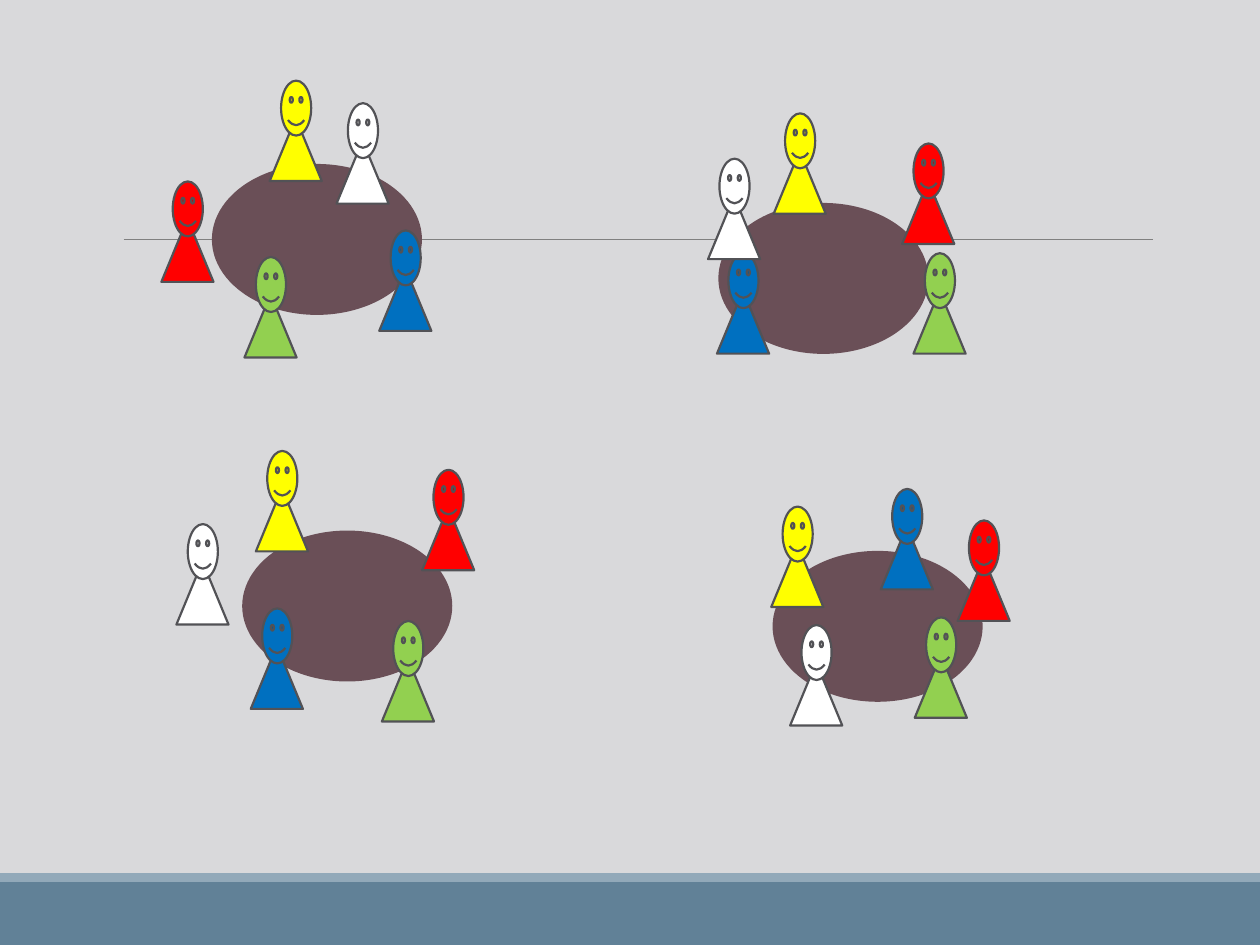
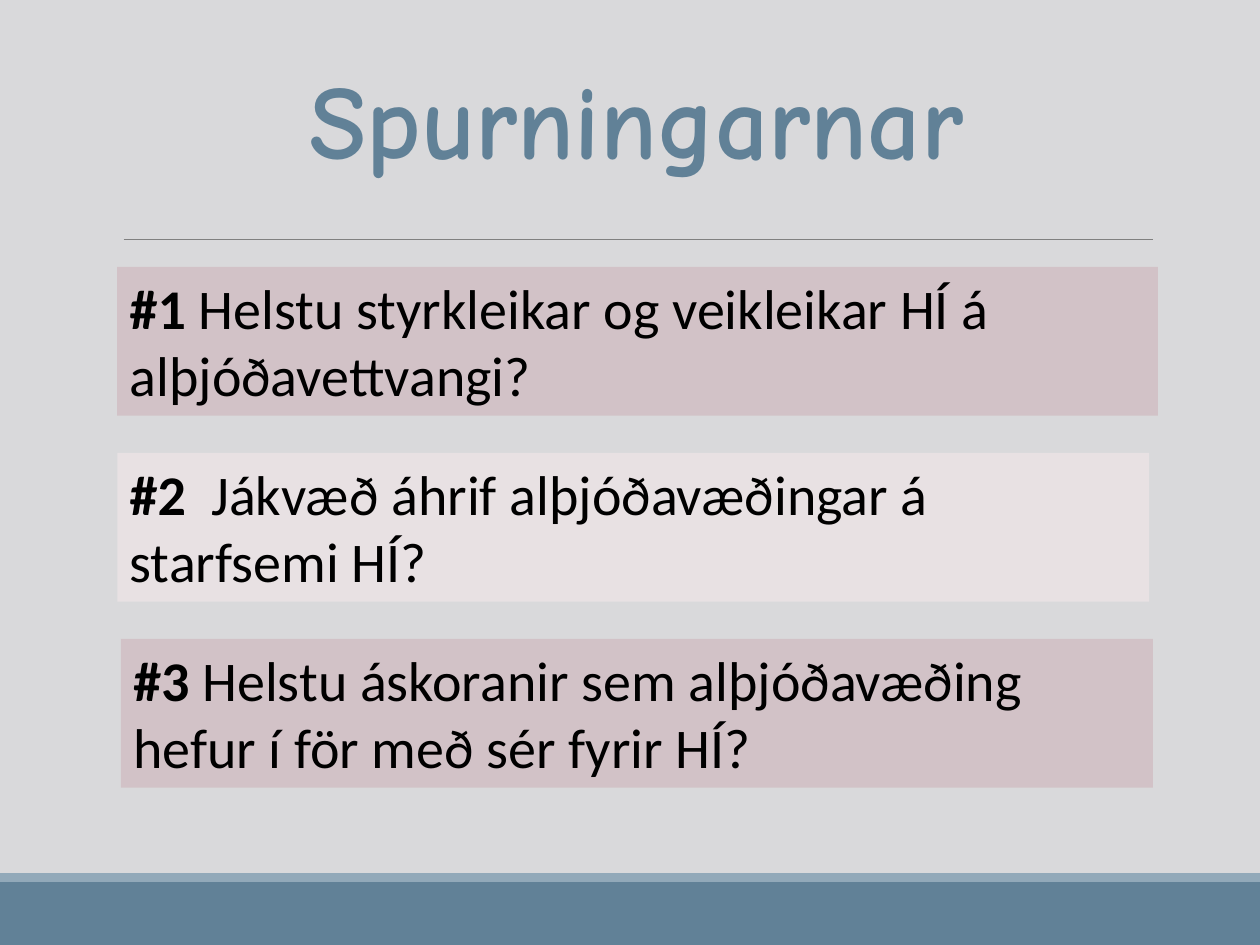
from lxml.etree import SubElement
from pptx import Presentation
from pptx.dml.color import RGBColor
from pptx.enum.shapes import MSO_CONNECTOR, MSO_SHAPE as Preset
from pptx.enum.text import MSO_ANCHOR, MSO_AUTO_SIZE, PP_ALIGN
from pptx.oxml.ns import qn
from pptx.util import Pt

SLIDE_W, SLIDE_H = 720, 540
TITLE_ONLY, BLANK = 5, 6
BACKGROUND, BAND, BAND_EDGE, RULE = "D9D9DB", "618197", "92A9B9", "808080"
TABLE, OUTLINE = "6A4F57", "525256"
ROSE, PALE_ROSE = "D2C2C7", "E8E1E3"
YELLOW, RED, GREEN, BLUE, WHITE = "FFFF00", "FF0000", "92D050", "0070C0", "FFFFFF"

TABLE_SIZE = (118.8, 85)
PERSON_COLOURS = (YELLOW, RED, GREEN, BLUE, WHITE)
SEATINGS = [
    ((121.7, 94.3),
     [(32.4, -48.2), (-29.5, 9.4), (18, 52.6), (95, 37.4), (70.6, -35.3)]),
    ((411.1, 116.6),
     [(31, -51.8), (104.4, -34.6), (110.9, 28.1), (-1.4, 28.1), (-6.5, -25.9)]),
    ((139, 303.8),
     [(7.2, -46.1), (102.2, -35.3), (79.2, 51.1), (4.3, 43.9), (-38.2, -4.3)]),
    ((442.1, 315.4),
     [(-1.4, -25.9), (105.1, -18), (80.6, 37.4), (61.2, -36), (9.4, 41.8)]),
]

QUESTION_TOP, QUESTION_STEP, QUESTION_H = 152.5, 106.3, 85
QUESTIONS = [
    (67, 594.7, ROSE, "#1", " Helstu styrkleikar og veikleikar HÍ á alþjóðavettvangi?"),
    (67, 589.7, PALE_ROSE, "#2", "  Jákvæð áhrif alþjóðavæðingar á starfsemi HÍ?"),
    (69.1, 589.7, ROSE, "#3",
     " Helstu áskoranir sem alþjóðavæðing hefur í för með sér fyrir HÍ?"),
]


def colour(hex_value):
    return RGBColor.from_string(hex_value)


def points(*lengths):
    return [Pt(length) for length in lengths]


def add_filled(shapes, preset, box, fill, line=None):
    shape = shapes.add_shape(preset, *points(*box))
    shape.shadow.inherit = False
    shape.fill.solid()
    shape.fill.fore_color.rgb = colour(fill)
    if line:
        shape.line.color.rgb = colour(line)
        shape.line.width = Pt(1.25)
    else:
        shape.line.fill.background()
    return shape


def add_base_slide(deck, layout):
    slide = deck.slides.add_slide(deck.slide_layouts[layout])
    slide.background.fill.solid()
    slide.background.fill.fore_color.rgb = colour(BACKGROUND)
    rule = slide.shapes.add_connector(
        MSO_CONNECTOR.STRAIGHT, *points(70.6, 136.8, 658.8, 136.8))
    rule.line.color.rgb = colour(RULE)
    rule.line.width = Pt(0.5)
    SubElement(rule._element.spPr, qn("a:effectLst"))
    add_filled(slide.shapes, Preset.RECTANGLE, (0, 504, SLIDE_W, 36), BAND)
    add_filled(slide.shapes, Preset.RECTANGLE, (0, 499, SLIDE_W, 5), BAND_EDGE)
    return slide


def add_person(slide, left, top, fill):
    person = slide.shapes.add_group_shape()
    add_filled(person.shapes, Preset.ISOSCELES_TRIANGLE,
               (left, top + 21.4, 29.8, 36), fill, OUTLINE)
    add_filled(person.shapes, Preset.SMILEY_FACE,
               (left + 6.5, top, 17.2, 31.4), fill, OUTLINE)


def add_seating(slide, left, top, seats):
    add_filled(slide.shapes, Preset.OVAL, (left, top, *TABLE_SIZE), TABLE, TABLE)
    for (dx, dy), fill in zip(seats, PERSON_COLOURS):
        add_person(slide, left + dx, top + dy, fill)


def add_title(slide, text, box):
    title = slide.shapes.title
    title.left, title.top, title.width, title.height = points(*box)
    frame = title.text_frame
    frame.text = text
    frame.auto_size = MSO_AUTO_SIZE.NONE
    frame.vertical_anchor = MSO_ANCHOR.TOP
    heading = frame.paragraphs[0]
    heading.alignment = PP_ALIGN.CENTER
    heading.font.name = "Comic Neue"
    heading.font.size = Pt(60)
    heading.font.bold = True
    heading.font.color.rgb = colour(BAND)


def add_question(slide, box, fill, number, wording):
    panel = add_filled(slide.shapes, Preset.RECTANGLE, box, fill)
    frame = panel.text_frame
    frame.word_wrap = True
    frame.vertical_anchor = MSO_ANCHOR.TOP
    question = frame.paragraphs[0]
    question.alignment = PP_ALIGN.LEFT
    question.font.name = "Calibri"
    question.font.size = Pt(32)
    question.font.color.rgb = colour("000000")
    for text, bold in ((number, True), (wording, False)):
        run = question.add_run()
        run.text = text
        run.font.bold = bold


def build_seating_slide(deck):
    slide = add_base_slide(deck, BLANK)
    for (left, top), seats in SEATINGS:
        add_seating(slide, left, top, seats)


def build_questions_slide(deck):
    slide = add_base_slide(deck, TITLE_ONLY)
    add_title(slide, "Spurningarnar", (56.9, 27.4, 613.4, 79.9))
    for row, (left, width, fill, number, wording) in enumerate(QUESTIONS):
        top = QUESTION_TOP + row * QUESTION_STEP
        add_question(slide, (left, top, width, QUESTION_H), fill, number, wording)


def main():
    deck = Presentation()
    deck.slide_width, deck.slide_height = points(SLIDE_W, SLIDE_H)
    build_seating_slide(deck)
    build_questions_slide(deck)
    deck.save("out.pptx")


if __name__ == "__main__":
    main()
